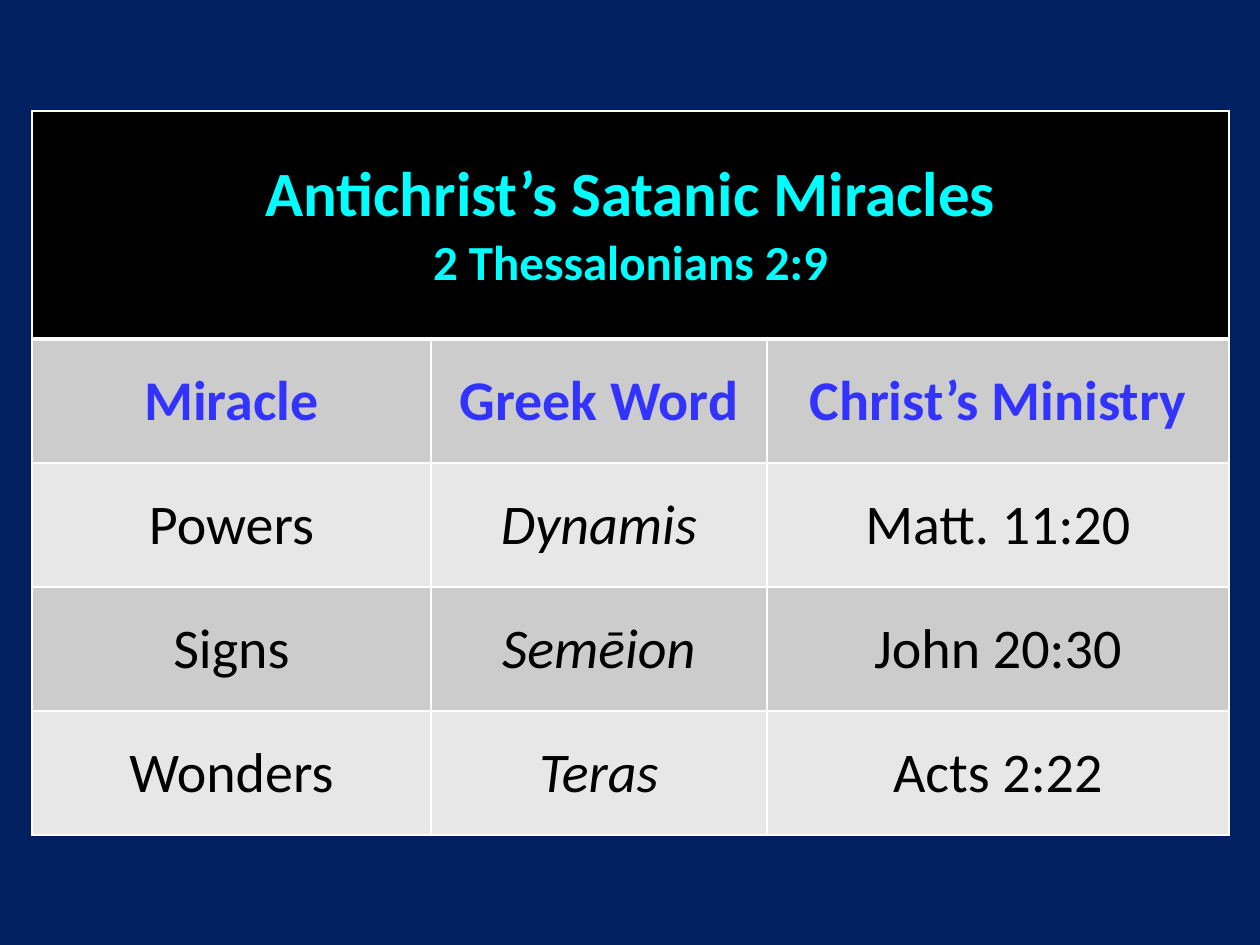
from lxml import etree
from pptx import Presentation
from pptx.dml.color import RGBColor
from pptx.enum.text import MSO_ANCHOR, PP_ALIGN
from pptx.oxml.ns import qn
from pptx.util import Emu, Pt

CENTER = PP_ALIGN.CENTER
MIDDLE = MSO_ANCHOR.MIDDLE

NAVY = RGBColor(0x00, 0x20, 0x60)
BLACK = RGBColor(0x00, 0x00, 0x00)
WHITE = RGBColor(0xFF, 0xFF, 0xFF)
CYAN = RGBColor(0x00, 0xFF, 0xFF)
BLUE = RGBColor(0x33, 0x33, 0xFF)
GRAY = RGBColor(0xCC, 0xCC, 0xCC)
LIGHT_GRAY = RGBColor(0xE7, 0xE7, 0xE7)

FONT = "Calibri"
PX_PER_INCH = 126

TITLE = [("Antichrist’s Satanic Miracles", 36), ("2 Thessalonians 2:9", 28)]
HEADINGS = ["Miracle", "Greek Word", "Christ’s Ministry"]
MIRACLES = [
    ["Powers", "Dynamis", "Matt. 11:20"],
    ["Signs", "Semēion", "John 20:30"],
    ["Wonders", "Teras", "Acts 2:22"],
]
GREEK_COLUMN = 1


def px(n):
    return Emu(round(n * 914400 / PX_PER_INCH))


class SlideBuilder:
    def __init__(self, s, font):
        self.s = s
        self.font = font

    def background(self, color):
        fill = self.s.background.fill
        fill.solid()
        fill.fore_color.rgb = color

    def table(self, left, top, widths, heights):
        frame = self.s.shapes.add_table(len(heights), len(widths), px(left), px(top),
                                        px(sum(widths)), px(sum(heights)))
        table = frame.table
        for column, width in zip(table.columns, widths):
            column.width = px(width)
        for row, height in zip(table.rows, heights):
            row.height = px(height)
        return table

    def cell(self, cell, lines, fill, color, bold=False, italic=False):
        cell.fill.solid()
        cell.fill.fore_color.rgb = fill
        cell.vertical_anchor = MIDDLE
        tf = cell.text_frame
        tf.text = "\n".join(text for text, size in lines)
        for p, (text, size) in zip(tf.paragraphs, lines):
            p.alignment = CENTER
            for r in p.runs:
                r.font.name = self.font
                r.font.size = Pt(size)
                r.font.bold = bold
                r.font.italic = italic
                r.font.color.rgb = color

    def borders(self, cell, color, top=1, bottom=1):
        # Border lines come before the fill in the cell properties
        tc_pr = cell._tc.get_or_add_tcPr()
        sides = [("a:lnL", 1), ("a:lnR", 1), ("a:lnT", top), ("a:lnB", bottom)]
        for i, (tag, width) in enumerate(sides):
            ln = etree.Element(qn(tag), w=str(Pt(width)))
            solid = etree.SubElement(ln, qn("a:solidFill"))
            etree.SubElement(solid, qn("a:srgbClr"), val=str(color))
            tc_pr.insert(i, ln)


def main():
    prs = Presentation()
    prs.slide_width, prs.slide_height = px(1260), px(945)
    slide = SlideBuilder(prs.slides.add_slide(prs.slide_layouts[6]), FONT)
    slide.background(NAVY)

    table = slide.table(32, 111, [399, 336, 462], [228] + [124] * 4)

    # Title row across all columns
    table.cell(0, 0).merge(table.cell(0, len(HEADINGS) - 1))
    slide.cell(table.cell(0, 0), TITLE, BLACK, CYAN, bold=True)

    # Headings and miracles in alternating bands
    for i, row in enumerate([HEADINGS] + MIRACLES):
        heading = i == 0
        for j, text in enumerate(row):
            slide.cell(table.cell(i + 1, j), [(text, 32)],
                       LIGHT_GRAY if i % 2 else GRAY,
                       BLUE if heading else BLACK,
                       bold=heading,
                       italic=j == GREEK_COLUMN and not heading)

    # White grid, heavier under the title
    for i, row in enumerate(table.rows):
        for cell in row.cells:
            slide.borders(cell, WHITE, top=3 if i == 1 else 1, bottom=3 if i == 0 else 1)

    prs.save("out.pptx")


if __name__ == "__main__":
    main()
